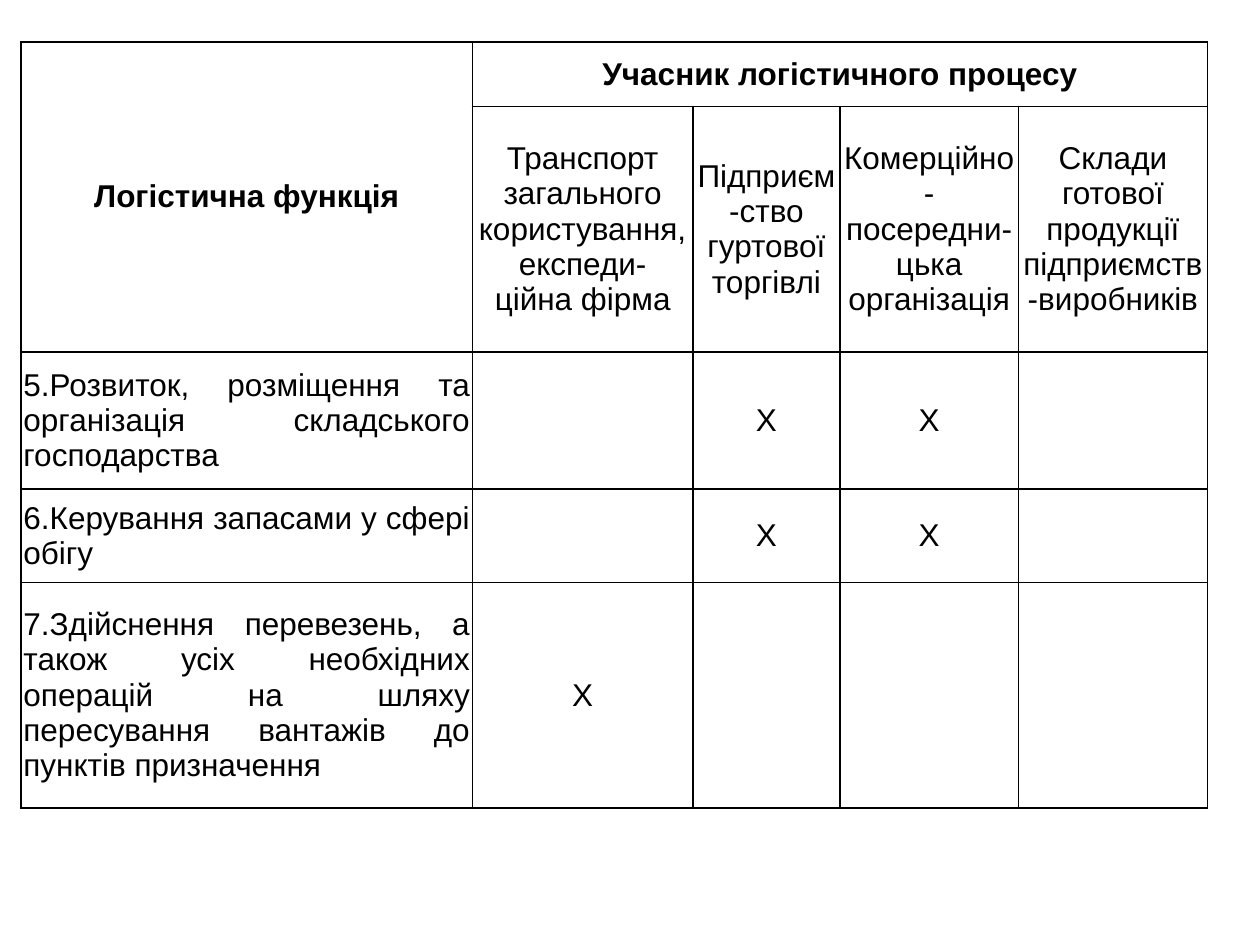
"""Build a slide with a table of logistics functions and process participants."""
from lxml import etree
from pptx import Presentation
from pptx.dml.color import RGBColor
from pptx.enum.text import MSO_ANCHOR, PP_ALIGN
from pptx.oxml.ns import qn
from pptx.util import Pt

CENTER, JUSTIFY = PP_ALIGN.CENTER, PP_ALIGN.JUSTIFY
MIDDLE = MSO_ANCHOR.MIDDLE
BLACK = "000000"
INSET = Pt(1.44)
COL_WIDTHS = [258, 126, 84, 102, 108]
ROW_HEIGHTS = [36.75, 140.4, 78.4, 53.4, 128.8]
ROWS = [
    ["Логістична функція", "Учасник логістичного процесу", "", "", ""],
    ["",
     "Транспорт загального\nкористування, експеди-\nційна фірма",
     "Підприєм-ство гуртової торгівлі",
     "Комерційно-посередни-\nцька організація",
     "Склади готової продукції підприємств-виробників"],
    ["5.Розвиток, розміщення та організація складського господарства",
     "", "Х", "Х", ""],
    ["6.Керування запасами у сфері обігу", "", "Х", "Х", ""],
    ["7.Здійснення перевезень, а також усіх необхідних операцій на шляху "
     "пересування вантажів до пунктів призначення", "Х", "", "", ""],
]


def rgb(value):
    return RGBColor.from_string(value)


def add_borders(cell, color, width):
    tc_pr = cell._tc.get_or_add_tcPr()
    for side in ("a:lnL", "a:lnR", "a:lnT", "a:lnB"):
        ln = etree.SubElement(tc_pr, qn(side), w=str(Pt(width)))
        fill = etree.SubElement(ln, qn("a:solidFill"))
        etree.SubElement(fill, qn("a:srgbClr"), val=color)


prs = Presentation()
prs.slide_width, prs.slide_height = Pt(720), Pt(540)
s = prs.slides.add_slide(prs.slide_layouts[6])
frame = s.shapes.add_table(len(ROWS), len(COL_WIDTHS), Pt(12), Pt(24),
                           Pt(sum(COL_WIDTHS)), Pt(sum(ROW_HEIGHTS)))
table = frame.table
table.first_row = table.horz_banding = False
for column, width in zip(table.columns, COL_WIDTHS):
    column.width = Pt(width)
for row, height in zip(table.rows, ROW_HEIGHTS):
    row.height = Pt(height)

for i, texts in enumerate(ROWS):
    for j, text in enumerate(texts):
        cell = table.cell(i, j)
        add_borders(cell, BLACK, 1)
        cell.fill.background()
        cell.vertical_anchor = MIDDLE
        cell.margin_left = cell.margin_right = INSET
        cell.margin_top = cell.margin_bottom = INSET
        cell.text = text
        for p in cell.text_frame.paragraphs:
            p.alignment = JUSTIFY if i > 1 and j == 0 else CENTER
            p.font.name = "Arial"
            p.font.size = Pt(18)
            p.font.bold = i == 0
            p.font.color.rgb = rgb(BLACK)

table.cell(0, 0).merge(table.cell(1, 0))
table.cell(0, 1).merge(table.cell(0, 4))

prs.save("out.pptx")
